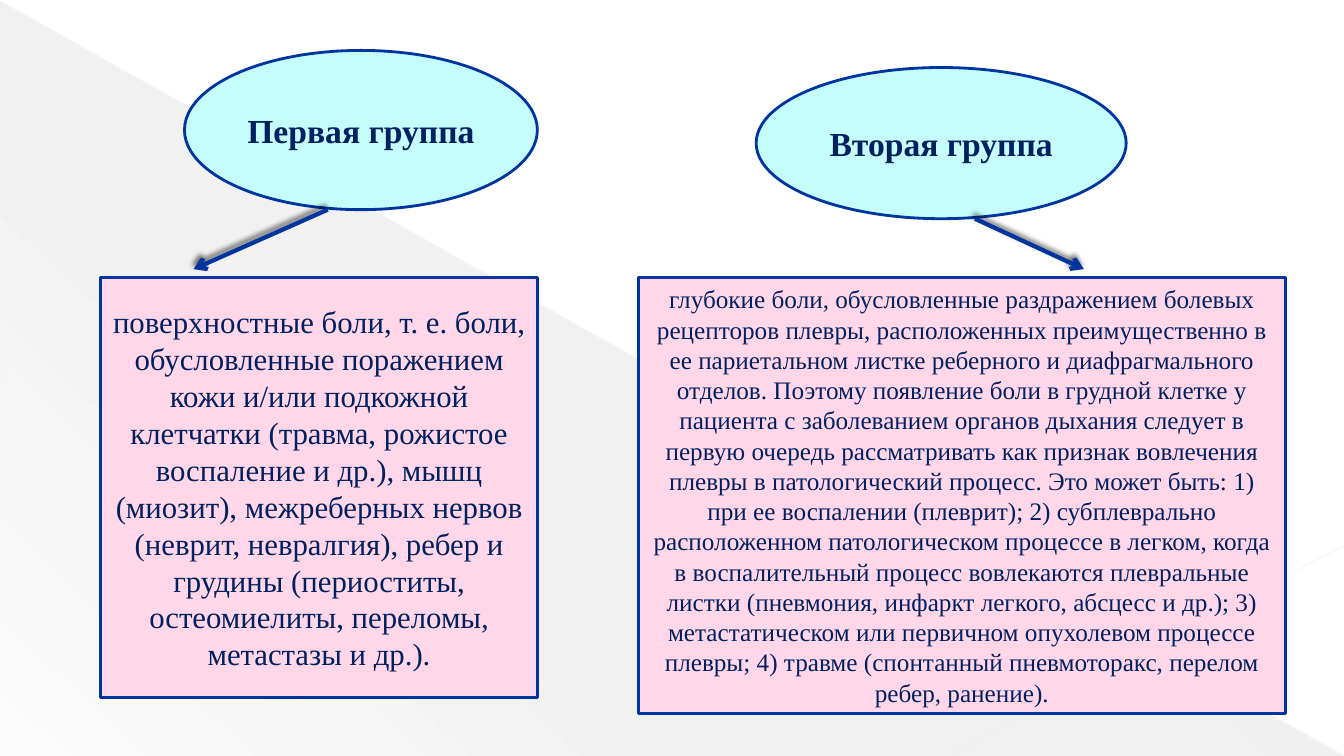
from lxml import etree
from pptx import Presentation
from pptx.dml.color import RGBColor
from pptx.enum import shapes, text
from pptx.oxml import ns, parse_xml
from pptx.util import Inches, Pt

NAVY = RGBColor(0x00, 0x20, 0x60)
BLUE = RGBColor(0x00, 0x34, 0x9E)
CYAN = RGBColor(0xC5, 0xFD, 0xFD)
PINK = RGBColor(0xFF, 0xD7, 0xE8)
PALE_GRAY = RGBColor(0xE8, 0xE8, 0xE8)
FONT = "Times New Roman"
OVAL = shapes.MSO_SHAPE.OVAL
RECTANGLE = shapes.MSO_SHAPE.RECTANGLE

FIRST_GROUP = (
    "поверхностные боли, т. е. боли, обусловленные поражением кожи и/или "
    "подкожной клетчатки (травма, рожистое воспаление и др.), мышц (миозит), "
    "межреберных нервов (неврит, невралгия), ребер и грудины (периоститы, "
    "остеомиелиты, переломы, метастазы и др.)."
)
SECOND_GROUP = (
    "глубокие боли, обусловленные раздражением болевых рецепторов плевры, "
    "расположенных преимущественно в ее париетальном листке реберного и "
    "диафрагмального отделов. Поэтому появление боли в грудной клетке у "
    "пациента с заболеванием органов дыхания следует в первую очередь "
    "рассматривать как признак вовлечения плевры в патологический процесс. "
    "Это может быть: 1) при ее воспалении (плеврит); 2) субплеврально "
    "расположенном патологическом процессе в легком, когда в воспалительный "
    "процесс вовлекаются плевральные листки (пневмония, инфаркт легкого, "
    "абсцесс и др.); 3) метастатическом или первичном опухолевом процессе "
    "плевры; 4) травме (спонтанный пневмоторакс, перелом ребер, ранение)."
)


def add_block(kind, box, fill, words, size, bold):
    sp = slide.shapes.add_shape(kind, *map(Inches, box))
    sp.shadow.inherit = False
    sp.fill.solid()
    sp.fill.fore_color.rgb = fill
    sp.line.color.rgb = BLUE
    sp.line.width = Pt(2)
    tf = sp.text_frame
    tf.word_wrap = True
    tf.vertical_anchor = text.MSO_ANCHOR.MIDDLE
    tf.text = words
    p = tf.paragraphs[0]
    p.alignment = text.PP_ALIGN.CENTER
    font = p.runs[0].font
    font.name, font.size, font.bold = FONT, Pt(size), bold
    font.color.rgb = NAVY


def add_line(start, end, color, width):
    """Draw a straight line; the empty effect list removes its shadow."""
    line = slide.shapes.add_connector(
        shapes.MSO_CONNECTOR.STRAIGHT, *map(Inches, start + end))
    line.line.color.rgb = color
    line.line.width = Pt(width)
    effects = etree.SubElement(line._element.spPr, ns.qn("a:effectLst"))
    return line, effects


prs = Presentation()
prs.slide_width, prs.slide_height = Inches(13.33), Inches(7.5)
slide = prs.slides.add_slide(prs.slide_layouts[6])

# Background triangle and hairlines
triangle = slide.shapes.add_shape(
    shapes.MSO_SHAPE.RIGHT_TRIANGLE,
    Inches(0.01), Inches(0.02), Inches(13.31), Inches(7.48))
triangle.shadow.inherit = False
triangle.line.fill.background()
stops = "".join(
    f'<a:gs pos="{pos * 1000}"><a:srgbClr val="666666">'
    f'<a:alpha val="{alpha * 1000}"/></a:srgbClr></a:gs>'
    for pos, alpha in ((0, 10), (70, 8), (100, 1)))
gradient = parse_xml(
    f'<a:gradFill {ns.nsdecls("a")} rotWithShape="1"><a:gsLst>{stops}</a:gsLst>'
    f'<a:lin ang="{133 * 60000}" scaled="0"/></a:gradFill>')
triangle._element.spPr.find(ns.qn("a:prstGeom")).addnext(gradient)

for start, end, width, alpha in (
    ((0, 0.01), (13.32, 7.49), 0.39, 35),
    ((13.33, 5.41), (9.43, 7.49), 0.47, 45),
):
    hairline, _ = add_line(start, end, PALE_GRAY, width)
    color = hairline._element.spPr.find(".//" + ns.qn("a:srgbClr"))
    etree.SubElement(color, ns.qn("a:alpha"), val=str(alpha * 1000))

# Group titles with their descriptions
for title, oval, words, box, size in (
    ("Первая группа", (1.83, 0.5, 3.5, 1.58),
     FIRST_GROUP, (1, 2.75, 4.33, 4.17), 22),
    ("Вторая группа", (7.5, 0.67, 3.67, 1.5),
     SECOND_GROUP, (6.33, 2.75, 6.42, 4.33), 18),
):
    add_block(OVAL, oval, CYAN, title, 24, True)
    add_block(RECTANGLE, box, PINK, words, size, False)

# Arrows from titles to descriptions
for start, end in (((3.25, 2.08), (1.92, 2.67)), ((9.67, 2.17), (10.75, 2.67))):
    arrow, effects = add_line(start, end, BLUE, 3)
    etree.SubElement(arrow.line._get_or_add_ln(), ns.qn("a:tailEnd"), type="arrow")
    effects.append(parse_xml(
        f'<a:outerShdw {ns.nsdecls("a")} blurRad="{Pt(4)}" dist="{Pt(3)}" '
        f'dir="{245 * 60000}" rotWithShape="0"><a:srgbClr val="000000">'
        f'<a:alpha val="60000"/></a:srgbClr></a:outerShdw>'))

prs.save("out.pptx")
